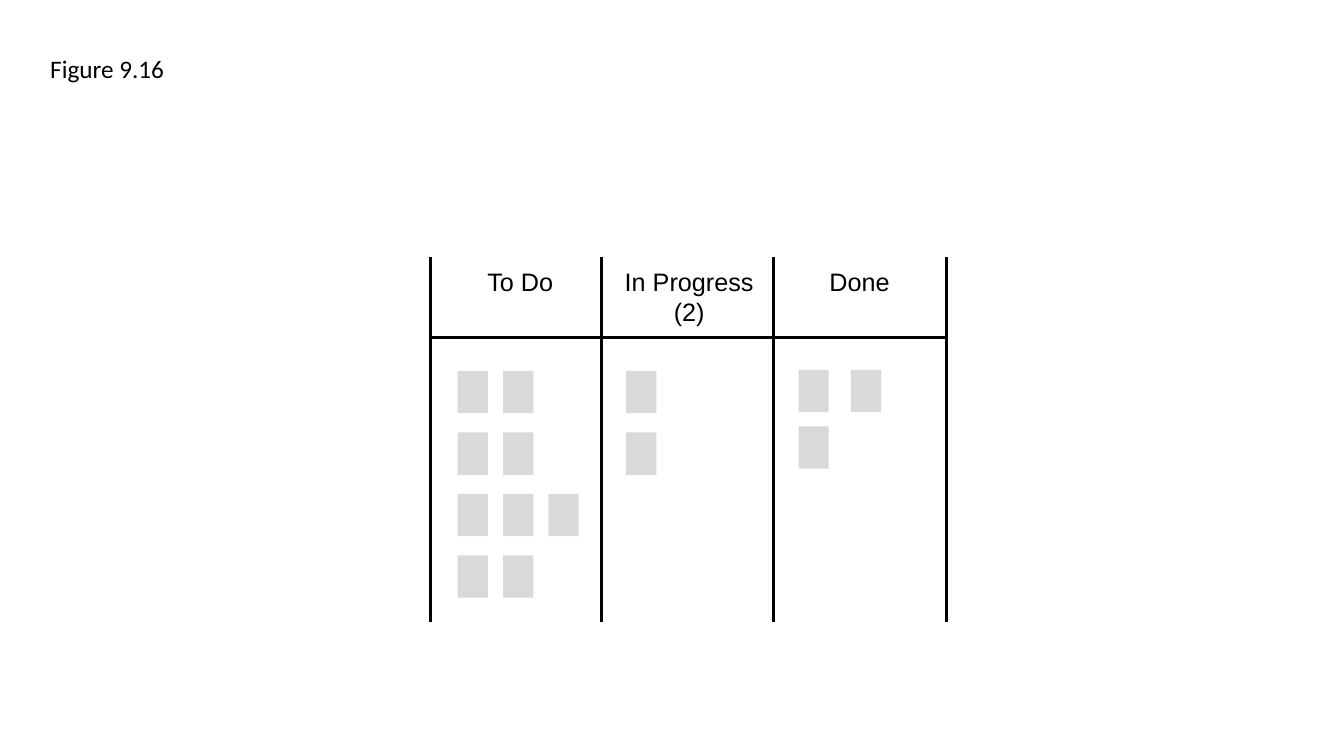
from dataclasses import dataclass

from lxml import etree
from pptx import Presentation
from pptx import util as u
from pptx.dml.color import RGBColor
from pptx.enum import shapes, text
from pptx.oxml.ns import qn

PX = 9144  # EMU per px, at 100 px to the inch


@dataclass(frozen=True)
class Theme:
    ink: str = "000000"
    card: str = "D9D9D9"
    caption_font: str = "Calibri"
    board_font: str = "Arial"
    size: int = 18
    line: int = 2


class Board:
    def __init__(self, slide, theme):
        self.s = slide
        self.theme = theme

    def line(self, x1, y1, x2, y2):
        c = self.s.shapes.add_connector(
            shapes.MSO_CONNECTOR.STRAIGHT, *(v * PX for v in (x1, y1, x2, y2)))
        c.line.color.rgb = RGBColor.from_string(self.theme.ink)
        c.line.width = u.Pt(self.theme.line)
        etree.SubElement(c._element.spPr, qn("a:effectLst"))

    def label(self, x, y, w, h, words, font, align):
        sp = self.s.shapes.add_textbox(*(v * PX for v in (x, y, w, h)))
        tf = sp.text_frame
        tf.text = words
        tf.word_wrap = False
        tf.auto_size = text.MSO_AUTO_SIZE.SHAPE_TO_FIT_TEXT
        for p in tf.paragraphs:
            p.alignment = align
            for r in p.runs:
                r.font.name = font
                r.font.size = u.Pt(self.theme.size)
                r.font.color.rgb = RGBColor.from_string(self.theme.ink)

    def card(self, x, y):
        sp = self.s.shapes.add_shape(
            shapes.MSO_SHAPE.RECTANGLE, *(v * PX for v in (x, y, 30, 42)))
        sp.shadow.inherit = False
        sp.fill.solid()
        sp.fill.fore_color.rgb = RGBColor.from_string(self.theme.card)
        sp.line.fill.background()

    def cards(self, x, y, step_x, step_y, counts):
        for row, count in enumerate(counts):
            for col in range(count):
                self.card(x + col * step_x, y + row * step_y)


def main():
    prs = Presentation()
    prs.slide_width, prs.slide_height = 1333 * PX, 750 * PX
    theme = Theme()
    board = Board(prs.slides.add_slide(prs.slide_layouts[6]), theme)

    # Board rules
    board.line(427, 335, 937, 335)
    for x in (427, 597, 767, 939):
        board.line(x, 255, x, 617)

    # Column headings: left, width, height, words
    for x, w, h, words in ((473, 86, 40, "To Do"),
                           (609, 149, 71, "In Progress\n(2)"),
                           (811, 83, 40, "Done")):
        board.label(x, 259, w, h, words, theme.board_font, text.PP_ALIGN.CENTER)

    # Cards: left, top, steps across and down, cards in each row
    board.cards(454, 368, 45, 61, (2, 2, 3, 2))
    board.cards(621, 368, 45, 61, (1, 1))
    board.cards(792, 367, 52, 56, (2, 1))

    # Caption
    board.label(40, 48, 134, 40, "Figure 9.16", theme.caption_font,
                text.PP_ALIGN.LEFT)

    prs.save("out.pptx")


if __name__ == "__main__":
    main()
